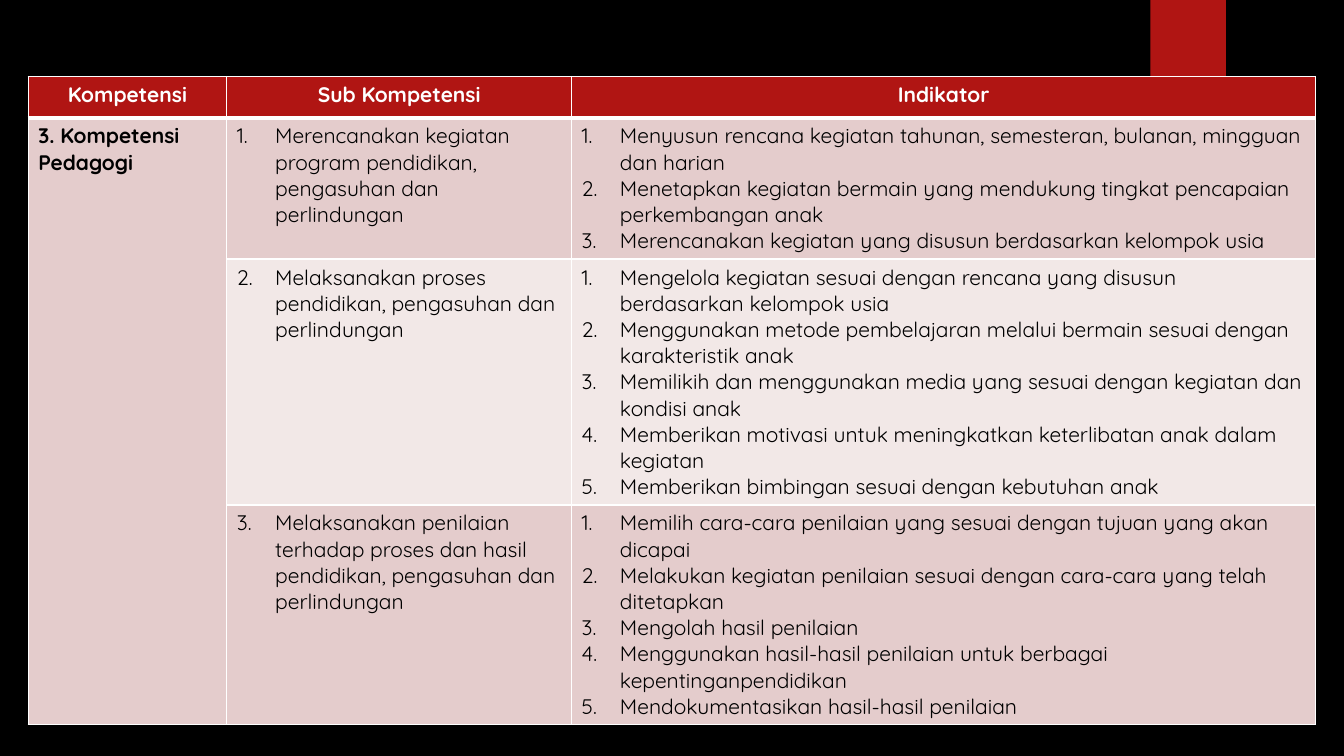
from lxml import etree
from pptx import Presentation
from pptx.dml.color import RGBColor
from pptx.enum.shapes import MSO_SHAPE
from pptx.enum.text import PP_ALIGN
from pptx.oxml.ns import qn
from pptx.util import Inches, Pt

RECTANGLE = MSO_SHAPE.RECTANGLE
LEFT, CENTER = PP_ALIGN.LEFT, PP_ALIGN.CENTER

COLORS = {
    "background": "000000",
    "accent": "B01513",
    "band_dark": "E4CCCC",
    "band_light": "F2E8E7",
    "text": "000000",
    "white": "FFFFFF",
}
FONT = "Quicksand"
HEADERS = ["Kompetensi", "Sub Kompetensi", "Indikator"]
COMPETENCY = "3. Kompetensi Pedagogi"
SECTIONS = [
    ("Merencanakan kegiatan program pendidikan, pengasuhan dan perlindungan", [
        "Menyusun rencana kegiatan tahunan, semesteran, bulanan, mingguan dan harian",
        "Menetapkan kegiatan bermain yang mendukung tingkat pencapaian perkembangan anak",
        "Merencanakan kegiatan yang disusun berdasarkan kelompok usia",
    ]),
    ("Melaksanakan proses pendidikan, pengasuhan dan perlindungan", [
        "Mengelola kegiatan sesuai dengan rencana yang disusun berdasarkan kelompok usia",
        "Menggunakan metode pembelajaran melalui bermain sesuai dengan karakteristik anak",
        "Memilikih dan menggunakan media yang sesuai dengan kegiatan dan kondisi anak",
        "Memberikan motivasi untuk meningkatkan keterlibatan anak dalam kegiatan",
        "Memberikan bimbingan sesuai dengan kebutuhan anak",
    ]),
    ("Melaksanakan penilaian terhadap proses dan hasil pendidikan, pengasuhan dan perlindungan", [
        "Memilih cara-cara penilaian yang sesuai dengan tujuan yang akan dicapai",
        "Melakukan kegiatan penilaian sesuai dengan cara-cara yang telah ditetapkan",
        "Mengolah hasil penilaian",
        "Menggunakan hasil-hasil penilaian untuk berbagai kepentinganpendidikan",
        "Mendokumentasikan hasil-hasil penilaian",
    ]),
]
COLUMN_WIDTHS = [1.97, 3.42, 7.38]
ROW_HEIGHTS = [0.41, 1.4, 2.44, 2.18]


def color(name):
    return RGBColor.from_string(COLORS[name])


def number_paragraph(paragraph, start):
    properties = paragraph._p.get_or_add_pPr()
    indent = Inches(0.38)
    properties.set("marL", str(indent))
    properties.set("indent", str(-indent))
    numbering = etree.SubElement(properties, qn("a:buAutoNum"), type="arabicPeriod")
    if start > 1:
        numbering.set("startAt", str(start))


def write_text(frame, lines, ink="text", bold=False, align=LEFT, start=None):
    for index, line in enumerate(lines):
        paragraph = frame.add_paragraph() if index else frame.paragraphs[0]
        paragraph.alignment = align
        if start:
            number_paragraph(paragraph, start)
        run = paragraph.add_run()
        run.text = line
        run.font.name = FONT
        run.font.size = Pt(15)
        run.font.bold = bold
        run.font.color.rgb = color(ink)


def style_cell(cell, fill, top=1, bottom=1):
    properties = cell._tc.get_or_add_tcPr()
    for side, width in (("L", 1), ("R", 1), ("T", top), ("B", bottom)):
        line = etree.SubElement(properties, qn(f"a:ln{side}"), w=str(Pt(width)))
        solid = etree.SubElement(line, qn("a:solidFill"))
        etree.SubElement(solid, qn("a:srgbClr"), val=COLORS["white"])
    cell.fill.solid()
    cell.fill.fore_color.rgb = color(fill)


def add_ribbon(slide, left, top, width, height):
    ribbon = slide.shapes.add_shape(
        RECTANGLE, Inches(left), Inches(top), Inches(width), Inches(height))
    ribbon.shadow.inherit = False
    ribbon.fill.solid()
    ribbon.fill.fore_color.rgb = color("accent")
    ribbon.line.fill.background()


def add_competency_table(slide, left, top, width, height):
    table = slide.shapes.add_table(
        len(ROW_HEIGHTS), len(COLUMN_WIDTHS),
        Inches(left), Inches(top), Inches(width), Inches(height)).table
    for column, share in zip(table.columns, COLUMN_WIDTHS):
        column.width = Inches(width * share / sum(COLUMN_WIDTHS))
    for row, share in zip(table.rows, ROW_HEIGHTS):
        row.height = Inches(height * share / sum(ROW_HEIGHTS))

    for column, header in enumerate(HEADERS):
        cell = table.cell(0, column)
        style_cell(cell, "accent", bottom=3)
        write_text(cell.text_frame, [header], ink="white", bold=True, align=CENTER)

    for row, (sub_competency, indicators) in enumerate(SECTIONS, start=1):
        band = "band_dark" if row % 2 else "band_light"
        for column in range(len(HEADERS)):
            style_cell(table.cell(row, column), band if column else "band_dark",
                       top=3 if row == 1 else 1)
        write_text(table.cell(row, 1).text_frame, [sub_competency], start=row)
        write_text(table.cell(row, 2).text_frame, indicators, start=1)

    competency = table.cell(1, 0)
    competency.merge(table.cell(len(SECTIONS), 0))
    write_text(competency.text_frame, [COMPETENCY], bold=True)


def main():
    presentation = Presentation()
    presentation.slide_width = Inches(13.33)
    presentation.slide_height = Inches(7.5)
    slide = presentation.slides.add_slide(presentation.slide_layouts[6])
    slide.background.fill.solid()
    slide.background.fill.fore_color.rgb = color("background")
    add_ribbon(slide, 11.41, 0, 0.75, 1.25)
    add_competency_table(slide, 0.28, 0.76, sum(COLUMN_WIDTHS), sum(ROW_HEIGHTS))
    presentation.save("out.pptx")


if __name__ == "__main__":
    main()
